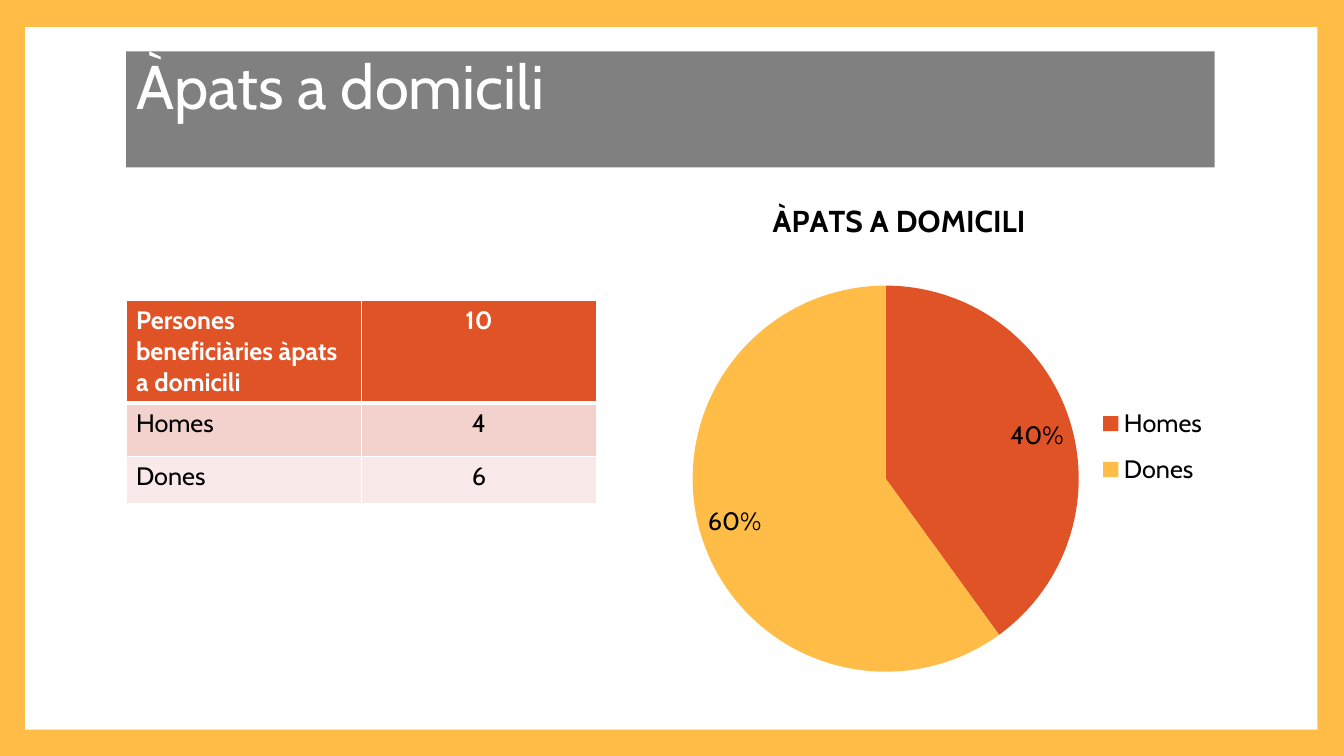
import pptx
import pptx.util
import pptx.dml.color
import pptx.chart.data
import pptx.enum.chart
import pptx.enum.shapes
import pptx.enum.text
import pptx.oxml
import pptx.oxml.ns

FONT = "Cabin"
COLORS = {
    "orange": "DF5327", "yellow": "FFBD47", "grey": "808080",
    "white": "FFFFFF", "black": "000000", "pink": "F3D1CD", "pale": "F9E9E8",
}
W, H = pptx.util.Inches(13.333), pptx.util.Inches(7.5)
LEFT, WIDTH = pptx.util.Inches(1.25), pptx.util.Inches(10.8)


def style(font, size, color, bold=False):
    font.name = FONT
    font.size = pptx.util.Pt(size)
    font.bold = bold
    font.color.rgb = pptx.dml.color.RGBColor.from_string(COLORS[color])


def place(parent, index, **shares):
    for old in parent.findall(pptx.oxml.ns.qn("c:layout")):
        parent.remove(old)
    tags = "".join(f'<c:{k}Mode val="edge"/>' for k in "xy")
    tags += "".join(f'<c:{k} val="{v}"/>' for k, v in shares.items())
    target = '<c:layoutTarget val="inner"/>' if index == 0 else ""
    parent.insert(index, pptx.oxml.parse_xml(
        f'<c:layout {pptx.oxml.ns.nsdecls("c")}><c:manualLayout>{target}{tags}'
        "</c:manualLayout></c:layout>"))


prs = pptx.Presentation()
prs.slide_width, prs.slide_height = W, H
s = prs.slides.add_slide(prs.slide_layouts[5])
s.background.fill.solid()
s.background.fill.fore_color.rgb = pptx.dml.color.RGBColor.from_string(COLORS["yellow"])

panel = s.shapes.add_shape(
    pptx.enum.shapes.MSO_SHAPE.RECTANGLE,
    pptx.util.Inches(0.25), pptx.util.Inches(0.27),
    pptx.util.Inches(12.82), pptx.util.Inches(6.97))
panel.shadow.inherit = False
panel.fill.solid()
panel.fill.fore_color.rgb = pptx.dml.color.RGBColor.from_string(COLORS["white"])
panel.line.fill.background()
s.shapes[0].element.addprevious(panel.element)

title = s.shapes.title
title.left, title.top = LEFT, pptx.util.Inches(0.51)
title.width, title.height = WIDTH, pptx.util.Inches(1.15)
title.fill.solid()
title.fill.fore_color.rgb = pptx.dml.color.RGBColor.from_string(COLORS["grey"])
tf = title.text_frame
tf.text = "Àpats a domicili"
tf.word_wrap = True
tf.auto_size = pptx.enum.text.MSO_AUTO_SIZE.NONE
tf.vertical_anchor = pptx.enum.text.MSO_ANCHOR.TOP
p = tf.paragraphs[0]
p.alignment = pptx.enum.text.PP_ALIGN.LEFT
p.line_spacing = 0.9
style(p.runs[0].font, 44, "white")

rows = [
    ("Persones beneficiàries àpats a domicili", "10", "orange", 1.0),
    ("Homes", "4", "pink", 0.53),
    ("Dones", "6", "pale", 0.47),
]
table = s.shapes.add_table(
    len(rows), 2, LEFT, pptx.util.Inches(2.98),
    pptx.util.Inches(4.67), pptx.util.Inches(2)).table
for i, (label, count, fill, height) in enumerate(rows):
    table.rows[i].height = pptx.util.Inches(height)
    for j, text in enumerate((label, count)):
        cell = table.cell(i, j)
        cell.fill.solid()
        cell.fill.fore_color.rgb = pptx.dml.color.RGBColor.from_string(COLORS[fill])
        cell.text_frame.text = text
        p = cell.text_frame.paragraphs[0]
        p.alignment = (pptx.enum.text.PP_ALIGN.LEFT, pptx.enum.text.PP_ALIGN.CENTER)[j]
        style(p.runs[0].font, 18, "black" if i else "white", i == 0)
        tc_pr = cell._tc.get_or_add_tcPr()
        for k, side in enumerate(("lnL", "lnR", "lnT", "lnB")):
            thick = (i, side) in ((0, "lnB"), (1, "lnT"))
            tc_pr.insert(k, pptx.oxml.parse_xml(
                f'<a:{side} {pptx.oxml.ns.nsdecls("a")} w="{pptx.util.Pt(3 if thick else 1)}">'
                f'<a:solidFill><a:srgbClr val="{COLORS["white"]}"/></a:solidFill></a:{side}>'))

data = pptx.chart.data.CategoryChartData()
data.categories = ["Homes", "Dones"]
data.add_series("Series 1", (40, 60))
chart = s.shapes.add_chart(
    pptx.enum.chart.XL_CHART_TYPE.PIE,
    pptx.util.Inches(6.7), pptx.util.Inches(1.77),
    pptx.util.Inches(5.35), pptx.util.Inches(5.32), data).chart
style(chart.font, 18, "black")
chart.has_title = True
chart.chart_title.include_in_layout = False
tf = chart.chart_title.text_frame
tf.text = "ÀPATS A DOMICILI"
style(tf.paragraphs[0].runs[0].font, 21.6, "black", True)

chart.has_legend = True
chart.legend.position = pptx.enum.chart.XL_LEGEND_POSITION.RIGHT
chart.legend.include_in_layout = False
style(chart.legend.font, 18, "black")

plot = chart.plots[0]
plot.vary_by_categories = True
for i, color in enumerate(("orange", "yellow")):
    fill = plot.series[0].points[i].format.fill
    fill.solid()
    fill.fore_color.rgb = pptx.dml.color.RGBColor.from_string(COLORS[color])
plot.has_data_labels = True
labels = plot.data_labels
labels.show_percentage = True
labels.show_value = False
labels.number_format = "0%"
labels.number_format_is_linked = False
labels.position = pptx.enum.chart.XL_LABEL_POSITION.INSIDE_END
style(labels.font, 18, "black")

place(chart._chartSpace.chart.plotArea, 0, x=0.03, y=0.2, w=0.72, h=0.72)
place(chart.legend._element, 1, x=0.78, y=0.4, w=0.21, h=0.2)
place(chart.chart_title._element, 1, x=0.17, y=0.03)

prs.save("out.pptx")
